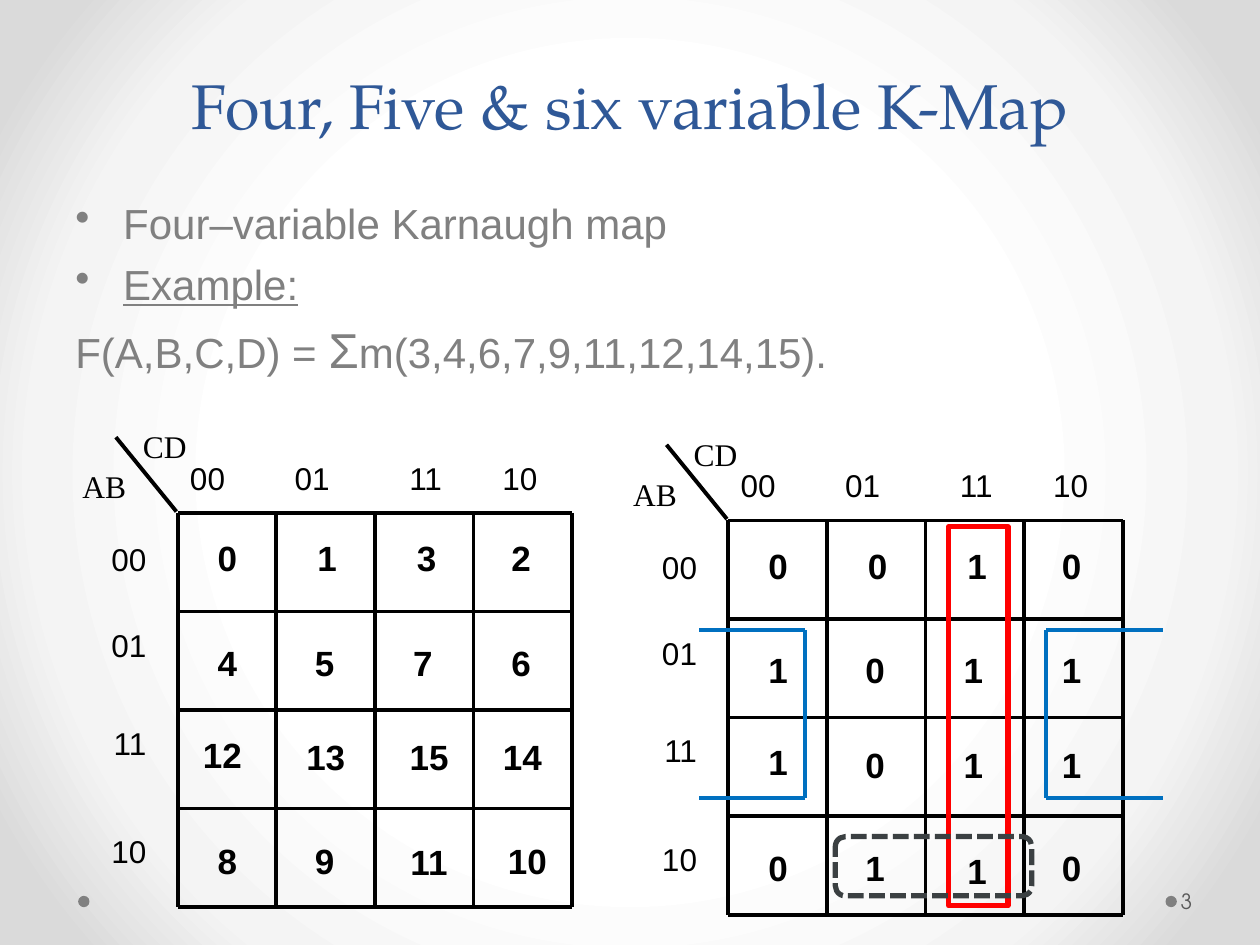
from dataclasses import dataclass, field

from lxml.etree import SubElement
from pptx import Presentation
from pptx.dml.color import RGBColor
from pptx.enum.dml import MSO_LINE
from pptx.enum.shapes import MSO_CONNECTOR, MSO_SHAPE
from pptx.enum.text import MSO_ANCHOR, PP_ALIGN
from pptx.oxml import parse_xml
from pptx.oxml.ns import nsdecls, qn
from pptx.util import Inches, Pt


@dataclass(frozen=True)
class Theme:
    title: str = "2F5897"
    body: str = "808080"
    number: str = "595959"
    ink: str = "000000"
    column_loop: str = "FF0000"
    row_loop: str = "3B4042"
    wrap_loop: str = "0070C0"
    backdrop: tuple = ((50, "FFFFFF"), (76, "F4F4F4"), (92, "DADADA"))
    sans: str = "Arial"
    serif: str = "Times New Roman"
    title_size: int = 36
    body_size: int = 24
    sigma_size: int = 28
    cell_size: int = 20
    label_size: int = 18
    number_size: int = 12


@dataclass(frozen=True)
class KarnaughMap:
    left: float
    top: float
    rows: tuple
    nudges: dict = field(default_factory=dict)  # (row, column): (dx, dy)


@dataclass(frozen=True)
class Bracket:
    open_x: float
    closed_x: float


THEME = Theme()
GRID_SIZE, GRID_COUNT = 3.13, 4
CELL_CENTERS = (0.385, 1.155, 1.935, 2.715)
CELL_TOPS = (0.14, 0.97, 1.72, 2.54)
GRAY_CODE = ("00", "01", "11", "10")
HEADER_TABS = (0.83, 1.74, 2.48)
ROW_LABEL_GAPS = (0, 27.5, 34, 40.5)

MAPS = (
    KarnaughMap(5.78, 4.13, ("0010", "1011", "1011", "0110"),
                {(0, 1): (0.02, 0), (0, 2): (0.03, 0),
                 (2, 0): (0, -0.02), (3, 2): (0.03, 0.02)}),
    KarnaughMap(1.41, 4.07, ((0, 1, 3, 2), (4, 5, 7, 6),
                             (12, 13, 15, 14), (8, 9, 11, 10)),
                {(0, 1): (0.02, 0), (0, 2): (0.03, 0), (2, 0): (-0.03, -0.02),
                 (2, 1): (0.02, 0), (2, 2): (0.06, 0), (2, 3): (0.02, 0),
                 (3, 2): (0.06, 0.01), (3, 3): (0.06, 0)}),
)
BRACKETS = (Bracket(9.23, 8.3), Bracket(5.55, 6.39))


def assign(target, values: dict) -> None:
    for name, value in values.items():
        setattr(target, name, value)


def add_box(shapes, left: float, top: float, width: float, height: float, **frame):
    box = shapes.add_textbox(Inches(left), Inches(top), Inches(width), Inches(height))
    assign(box.text_frame, {"word_wrap": True, **frame})
    return box


def add_span(para, text: str, size: float, color: str, font: str = THEME.sans, **style):
    span = para.add_run()
    span.text = text
    assign(span.font, {"size": Pt(size), "name": font, **style})
    span.font.color.rgb = RGBColor.from_string(color)


def add_line(shapes, start: tuple, end: tuple, color: str, width: float) -> None:
    line = shapes.add_connector(MSO_CONNECTOR.STRAIGHT,
                                *(Inches(value) for value in start + end))
    line.line.color.rgb = RGBColor.from_string(color)
    line.line.width = Pt(width)
    SubElement(line._element.spPr, qn("a:effectLst"))


def add_shape(shapes, kind, left: float, top: float, width: float, height: float):
    shape = shapes.add_shape(kind, Inches(left), Inches(top), Inches(width), Inches(height))
    shape.shadow.inherit = False
    return shape


def add_loop(shapes, kind, bounds: tuple, color: str, **style) -> None:
    loop = add_shape(shapes, kind, *bounds)
    loop.fill.background()
    loop.line.color.rgb = RGBColor.from_string(color)
    assign(loop.line, {"width": Pt(3), **style})


def set_indent(para, bullet: bool) -> None:
    properties = para._p.get_or_add_pPr()
    properties.set("marL", str(Inches(0.38)))
    properties.set("indent", str(Inches(-0.38)))
    if bullet:
        SubElement(properties, qn("a:buChar"), char="•")
    else:
        SubElement(properties, qn("a:buNone"))


def draw_map(slide, kmap: KarnaughMap) -> None:
    shapes = slide.shapes.add_group_shape().shapes
    left, top = kmap.left, kmap.top

    # Cell values
    for row, values in enumerate(kmap.rows):
        for column, value in enumerate(values):
            dx, dy = kmap.nudges.get((row, column), (0, 0))
            width = 0.33 if len(str(value)) == 1 else 0.62
            box = add_box(shapes, left + CELL_CENTERS[column] + dx - width / 2,
                          top + CELL_TOPS[row] + dy, width, 0.43)
            para = box.text_frame.paragraphs[0]
            para.alignment = PP_ALIGN.CENTER
            add_span(para, str(value), THEME.cell_size, THEME.ink, bold=True)

    # Grid and corner diagonal
    for index in range(GRID_COUNT + 1):
        offset = index * GRID_SIZE / GRID_COUNT
        add_line(shapes, (left + offset, top), (left + offset, top + GRID_SIZE), THEME.ink, 2.13)
        add_line(shapes, (left, top + offset), (left + GRID_SIZE, top + offset), THEME.ink, 2.13)
    add_line(shapes, (left - 0.01, top - 0.01), (left - 0.49, top - 0.6), THEME.ink, 2.25)

    # Column codes on tab stops
    para = add_box(shapes, left, top - 0.48, 3.07, 0.4).text_frame.paragraphs[0]
    tabs = SubElement(para._p.get_or_add_pPr(), qn("a:tabLst"))
    for stop in HEADER_TABS:
        SubElement(tabs, qn("a:tab"), pos=str(Inches(stop)), algn="l")
    add_span(para, "\t".join(GRAY_CODE), THEME.label_size, THEME.ink)

    # Row codes
    frame = add_box(shapes, left - 0.86, top + 0.17, 0.71, 2.82).text_frame
    for index, (code, gap) in enumerate(zip(GRAY_CODE, ROW_LABEL_GAPS)):
        para = frame.add_paragraph() if index else frame.paragraphs[0]
        assign(para, {"alignment": PP_ALIGN.RIGHT, "space_before": Pt(gap)})
        add_span(para, code, THEME.label_size, THEME.ink)

    # Variable names
    for name, dx, dy in (("CD", -0.54, -0.73), ("AB", -1.02, -0.41)):
        para = add_box(shapes, left + dx, top + dy, 0.71, 0.4).text_frame.paragraphs[0]
        para.alignment = PP_ALIGN.RIGHT
        add_span(para, name, THEME.label_size, THEME.ink, THEME.serif)


def draw_background(slide) -> None:
    stops = "".join(f'<a:gs pos="{position * 1000}"><a:srgbClr val="{color}"/></a:gs>'
                    for position, color in THEME.backdrop)
    slide._element.cSld.insert(0, parse_xml(
        f'<p:bg {nsdecls("p", "a")}><p:bgPr><a:gradFill><a:gsLst>{stops}</a:gsLst>'
        '<a:path path="circle"><a:fillToRect l="50000" t="50000" r="50000" b="50000"/>'
        '</a:path></a:gradFill><a:effectLst/></p:bgPr></p:bg>'))


def draw_text(slide) -> None:
    # Footer dots
    for left in (9.25, 0.62):
        dot = add_shape(slide.shapes, MSO_SHAPE.OVAL, left, 7.11, 0.09, 0.09)
        dot.fill.solid()
        dot.fill.fore_color.rgb = RGBColor.from_string(THEME.body)
        dot.line.fill.background()

    # Title
    title = add_box(slide.shapes, 0.5, 0.47, 9, 0.71, vertical_anchor=MSO_ANCHOR.BOTTOM)
    para = title.text_frame.paragraphs[0]
    assign(para, {"alignment": PP_ALIGN.CENTER, "line_spacing": Pt(58)})
    add_span(para, "Four, Five & six variable K-Map", THEME.title_size, THEME.title,
             "TeX Gyre Pagella")

    # Body
    size = THEME.body_size
    lines = (
        (True, (("Four–variable Karnaugh map", size, False),)),
        (True, (("Example:", size, True),)),
        (False, (("F(A,B,C,D) = ", size, False), ("Σ", THEME.sigma_size, False),
                 ("m(3,4,6,7,9,11,12,14,15).", size, False))),
    )
    frame = add_box(slide.shapes, 0.5, 1.52, 9, 4.76).text_frame
    for index, (bullet, spans) in enumerate(lines):
        para = frame.add_paragraph() if index else frame.paragraphs[0]
        set_indent(para, bullet)
        para.space_before = Pt(6 if index else 0)
        for text, span_size, underline in spans:
            add_span(para, text, span_size, THEME.body, underline=underline)

    # Slide number
    number = add_box(slide.shapes, 9.34, 6.95, 0.61, 0.4,
                     vertical_anchor=MSO_ANCHOR.MIDDLE, margin_left=Inches(0.03),
                     margin_right=Inches(0.05))
    add_span(number.text_frame.paragraphs[0], "3", THEME.number_size, THEME.number,
             "TeX Gyre Adventor")


def draw_loops(slide) -> None:
    add_loop(slide.shapes, MSO_SHAPE.RECTANGLE, (7.53, 4.18, 0.47, 3.01), THEME.column_loop)
    add_loop(slide.shapes, MSO_SHAPE.ROUNDED_RECTANGLE, (6.63, 6.64, 1.56, 0.47),
             THEME.row_loop, dash_style=MSO_LINE.SQUARE_DOT)
    # Brackets that wrap around the map edges
    shapes = slide.shapes.add_group_shape().shapes
    for bracket in BRACKETS:
        corners = ((bracket.open_x, 5), (bracket.closed_x, 5),
                   (bracket.closed_x, 6.33), (bracket.open_x, 6.33))
        for start, end in zip(corners, corners[1:]):
            add_line(shapes, start, end, THEME.wrap_loop, 2.25)


def main() -> None:
    deck = Presentation()
    assign(deck, {"slide_width": Inches(10), "slide_height": Inches(7.5)})
    page = deck.slides.add_slide(deck.slide_layouts[6])
    draw_background(page)
    draw_text(page)
    for kmap in MAPS:
        draw_map(page, kmap)
    draw_loops(page)
    deck.save("out.pptx")


if __name__ == "__main__":
    main()
